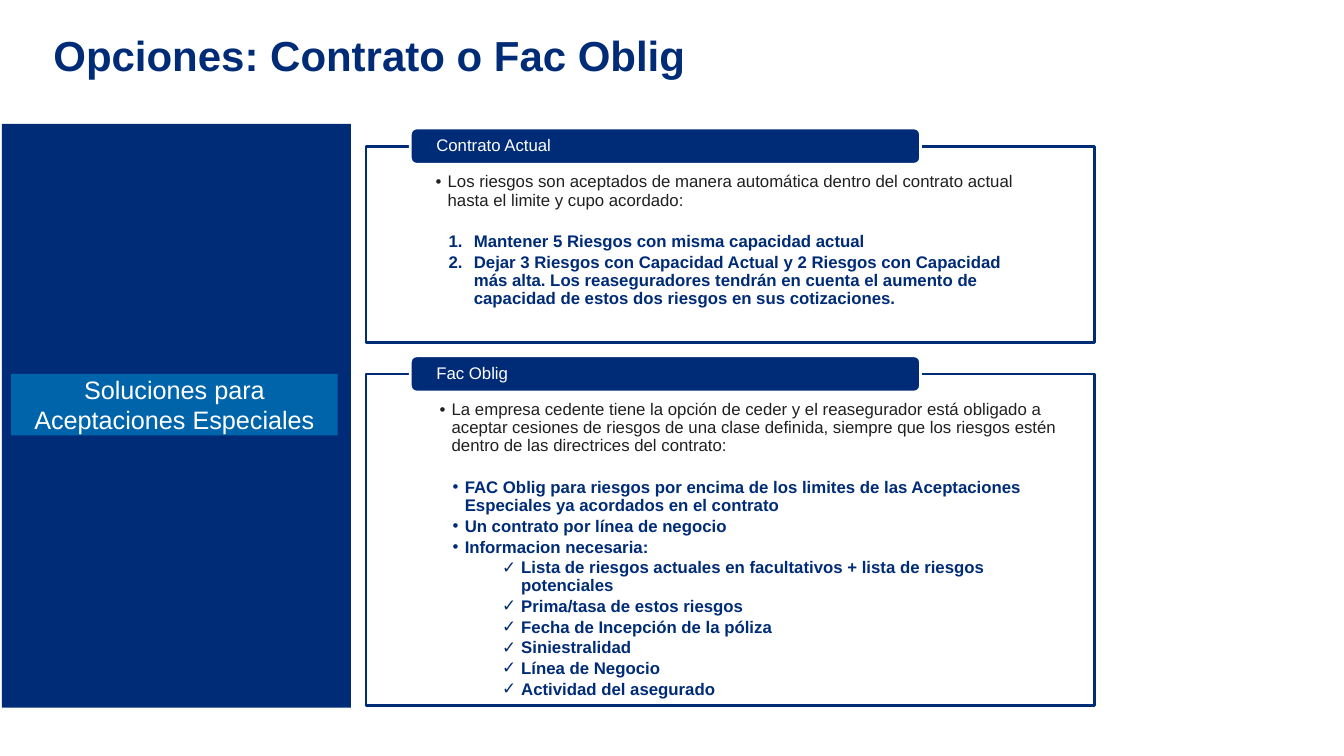
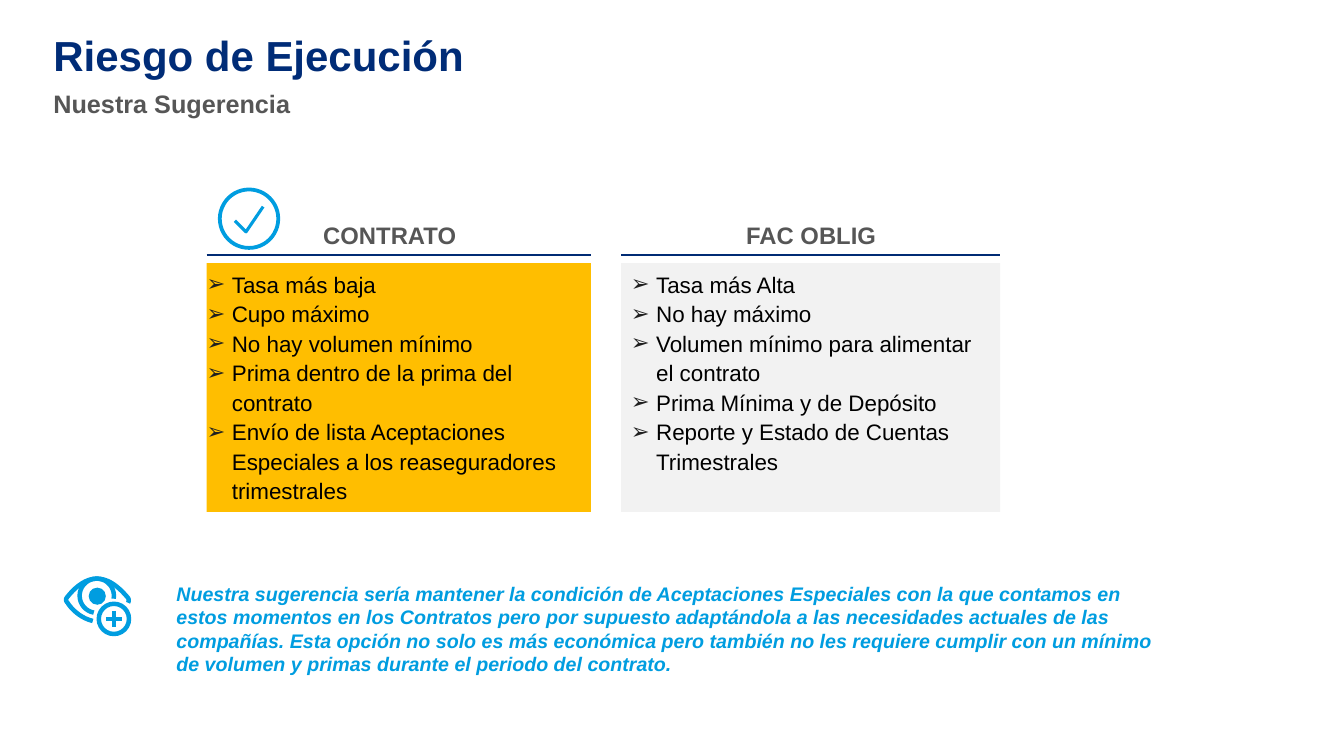
import math

import pptx
import pptx.dml.color
import pptx.enum.shapes
import pptx.enum.text
import pptx.oxml
import pptx.oxml.ns
import pptx.util
from pptx.util import Inches, Pt

RGBColor = pptx.dml.color.RGBColor
MSO_SHAPE = pptx.enum.shapes.MSO_SHAPE
MSO_ANCHOR = pptx.enum.text.MSO_ANCHOR
PP_ALIGN = pptx.enum.text.PP_ALIGN

NAVY = RGBColor(0x00, 0x2C, 0x77)
RULE = RGBColor(0x00, 0x2B, 0x74)
SKY = RGBColor(0x00, 0x9D, 0xE0)
AMBER = RGBColor(0xFF, 0xBE, 0x00)
PALE = RGBColor(0xF2, 0xF2, 0xF2)
GREY = RGBColor(0x56, 0x56, 0x56)
INK = RGBColor(0x20, 0x20, 0x20)
BLACK = RGBColor(0x00, 0x00, 0x00)
WHITE = RGBColor(0xFF, 0xFF, 0xFF)

FONT = "Arial"
NUMBER = "1."

# Bullet, left margin, hanging indent
INTRO = ("•", 0.12, 0.12)
NUMBERED = (NUMBER, 0.38, 0.25)
POINT = ("•", 0.25, 0.12)
CHECK = ("✓", 0.81, 0.19)
ARROW = ("➢", 0.25, 0.25)


def add_xml(parent, tag, **attrs):
    el = pptx.oxml.parse_xml(f"<a:{tag} {pptx.oxml.ns.nsdecls('a')}/>")
    for name, value in attrs.items():
        el.set(name, str(value))
    parent.append(el)
    return el


def set_bullet(p, style, color):
    mark, margin, hanging = style
    pPr = p._p.get_or_add_pPr()
    pPr.set("marL", str(Inches(margin)))
    pPr.set("indent", str(-Inches(hanging)))
    add_xml(add_xml(pPr, "buClr"), "srgbClr", val=color)
    add_xml(pPr, "buFont", typeface=FONT)
    if mark == NUMBER:
        add_xml(pPr, "buAutoNum", type="arabicPeriod")
    else:
        add_xml(pPr, "buChar", char=mark)


def set_font(p, size, color, bold=False, italic=False):
    f = p.font
    f.name, f.size, f.bold, f.italic = FONT, Pt(size), bold, italic
    f.color.rgb = color


def set_frame(tf, insets, anchor=MSO_ANCHOR.TOP):
    """Insets run left, top, right, bottom."""
    tf.word_wrap = True
    tf.vertical_anchor = anchor
    tf.margin_left, tf.margin_top, tf.margin_right, tf.margin_bottom = map(Inches, insets)


def next_paragraph(tf, text):
    p = tf.add_paragraph() if tf.text else tf.paragraphs[0]
    p.text = text
    p.alignment = PP_ALIGN.LEFT
    return p


def add_text(s, box, text, size, color, bold=True, italic=False,
             insets=(0, 0, 0, 0), align=PP_ALIGN.LEFT, spacing=1.0):
    tf = s.shapes.add_textbox(*map(Inches, box)).text_frame
    set_frame(tf, insets)
    p = next_paragraph(tf, text)
    p.alignment = align
    p.line_spacing = spacing
    set_font(p, size, color, bold, italic)


def add_box(s, box, fill, line=None, width=2, kind=MSO_SHAPE.RECTANGLE):
    sp = s.shapes.add_shape(kind, *map(Inches, box))
    sp.shadow.inherit = False
    if fill is None:
        sp.fill.background()
    else:
        sp.fill.solid()
        sp.fill.fore_color.rgb = fill
    if line is None:
        sp.line.fill.background()
    else:
        sp.line.color.rgb = line
        sp.line.width = Pt(width)
    return sp


def add_line(s, start, end, color, width):
    c = s.shapes.add_connector(pptx.enum.shapes.MSO_CONNECTOR.STRAIGHT,
                               *map(Inches, start + end))
    c.line.color.rgb = color
    c.line.width = Pt(width)
    add_xml(c._element.spPr, "effectLst")


def add_stroke(s, points, width):
    """Open outline through the points."""
    (x, y), *rest = [(Inches(px), Inches(py)) for px, py in points]
    builder = s.shapes.build_freeform(x, y, scale=1.0)
    builder.add_line_segments(rest, close=False)
    sp = builder.convert_to_shape()
    sp.shadow.inherit = False
    sp.fill.background()
    sp.line.color.rgb = SKY
    sp.line.width = Pt(width)


def curve(start, *segments, steps=10):
    """Points along a chain of cubic curves, each (control, control, end)."""
    points = [start]
    for b, c, d in segments:
        a = points[-1]
        for i in range(1, steps + 1):
            t = i / steps
            u = 1 - t
            points.append(tuple(
                u**3 * a[k] + 3 * u * u * t * b[k] + 3 * u * t * t * c[k] + t**3 * d[k]
                for k in (0, 1)))
    return points


def arc(cx, cy, r, first, last, step=10):
    return [(cx + r * math.cos(math.radians(a)), cy + r * math.sin(math.radians(a)))
            for a in range(first, last - 1, -step)]


def add_title(s, text):
    add_text(s, (0.53, 0.39, 12.27, 0.54), text, 30, NAVY, spacing=0.8)


def add_panel(s, top, height, heading, side_insets, intro, points):
    """Framed text with a heading tab; points are (bullet style, text)."""
    left, right = side_insets
    tf = add_box(s, (3.63, top, 7.23, height), WHITE, NAVY).text_frame
    set_frame(tf, (left, 0.27, right, 0.09))
    for i, (style, text) in enumerate([(INTRO, intro), *points]):
        color = NAVY if i else INK
        p = next_paragraph(tf, text)
        set_bullet(p, style, color)
        p.line_spacing = 0.9
        p.space_before = Pt(15 if i == 1 else 0)
        p.space_after = Pt(1.8)
        set_font(p, 12, color, bold=i > 0)

    tab = add_box(s, (4.07, top - 0.18, 5.06, 0.36), NAVY, WHITE,
                  kind=MSO_SHAPE.ROUNDED_RECTANGLE)
    set_frame(tab.text_frame, (0.24, 0, 0.24, 0), MSO_ANCHOR.MIDDLE)
    p = next_paragraph(tab.text_frame, heading)
    p.line_spacing = 0.9
    set_font(p, 12, WHITE)


def add_sidebar(s, text):
    add_box(s, (0.02, 1.23, 3.46, 5.79), NAVY)
    label = add_box(s, (0.11, 3.71, 3.24, 0.61), SKY)
    color = label.fill._xPr.find(".//" + pptx.oxml.ns.qn("a:srgbClr"))
    add_xml(color, "alpha", val=50000)
    set_frame(label.text_frame, (0.1, 0.05, 0.1, 0.05), MSO_ANCHOR.MIDDLE)
    p = next_paragraph(label.text_frame, text)
    p.alignment = PP_ALIGN.CENTER
    set_font(p, 18, WHITE)


def add_column(s, left, width, fill, inset, heading, heading_box, items):
    tf = add_box(s, (left, 2.61, width, 2.47), fill).text_frame
    set_frame(tf, (inset, 0.05, inset, 0.05))
    for text in items:
        p = next_paragraph(tf, text)
        set_bullet(p, ARROW, INK)
        p.line_spacing = 1.1
        set_font(p, 16, BLACK)
    x, w = heading_box
    add_text(s, (x, 2.14, w, 0.39), heading, 17, GREY,
             insets=(0.1, 0.05, 0.1, 0.05), align=PP_ALIGN.CENTER)
    add_line(s, (left, 2.53), (left + width, 2.53), RULE, 0.75)


def add_check_icon(s):
    add_box(s, (2.18, 1.88, 0.58, 0.58), None, SKY, 2.7, MSO_SHAPE.OVAL)
    add_stroke(s, [(2.33, 2.19), (2.44, 2.3), (2.61, 2.05)], 2.2)


def add_eye_icon(s):
    width = 3.2
    add_box(s, (0.88, 5.83, 0.17, 0.17), SKY, kind=MSO_SHAPE.OVAL)
    add_stroke(s, curve(
        (1.27, 5.98),
        ((1.28, 5.96), (1.28, 5.94), (1.26, 5.92)),
        ((1.19, 5.84), (1.09, 5.74), (0.96, 5.74)),
        ((0.82, 5.74), (0.71, 5.87), (0.67, 5.92)),
        ((0.65, 5.94), (0.65, 5.96), (0.67, 5.98)),
        ((0.7, 6.03), (0.79, 6.13), (0.92, 6.16))), width)
    add_stroke(s, arc(0.96, 5.91, 0.17, 10, -260), width)
    x, y, r, arm = 1.13, 6.14, 0.15, 0.08
    add_box(s, (x - r, y - r, 2 * r, 2 * r), None, SKY, width, MSO_SHAPE.OVAL)
    add_line(s, (x - arm, y), (x + arm, y), SKY, width)
    add_line(s, (x, y - arm), (x, y + arm), SKY, width)


def build_options(s):
    add_title(s, "Opciones: Contrato o Fac Oblig")
    add_panel(
        s, 1.45, 1.95, "Contrato Actual", (0.69, 0.69),
        "Los riesgos son aceptados de manera automática dentro del contrato actual "
        "hasta el limite y cupo acordado:",
        [(NUMBERED, "Mantener 5 Riesgos con misma capacidad actual"),
         (NUMBERED, "Dejar 3 Riesgos con Capacidad Actual y 2 Riesgos con Capacidad más alta. "
                    "Los reaseguradores tendrán en cuenta el aumento de capacidad de estos "
                    "dos riesgos en sus cotizaciones.")])
    add_panel(
        s, 3.71, 3.29, "Fac Oblig", (0.73, 0.29),
        "La empresa cedente tiene la opción de ceder y el reasegurador está obligado a "
        "aceptar cesiones de riesgos de una clase definida, siempre que los riesgos estén "
        "dentro de las directrices del contrato:",
        [(POINT, "FAC Oblig para riesgos por encima de los limites de las Aceptaciones "
                 "Especiales ya acordados en el contrato"),
         (POINT, "Un contrato por línea de negocio"),
         (POINT, "Informacion necesaria:"),
         (CHECK, "Lista de riesgos actuales en facultativos + lista de riesgos potenciales"),
         (CHECK, "Prima/tasa de estos riesgos"),
         (CHECK, "Fecha de Incepción de la póliza"),
         (CHECK, "Siniestralidad"),
         (CHECK, "Línea de Negocio"),
         (CHECK, "Actividad del asegurado")])
    add_sidebar(s, "Soluciones para Aceptaciones Especiales")


def build_suggestion(s):
    add_title(s, "Riesgo de Ejecución")
    add_text(s, (0.53, 0.88, 12.28, 0.35), "Nuestra Sugerencia", 18, GREY)
    add_column(s, 2.05, 3.81, AMBER, 0, "CONTRATO", (1.94, 3.85), [
        "Tasa más baja",
        "Cupo máximo",
        "No hay volumen mínimo",
        "Prima dentro de la prima del contrato",
        "Envío de lista Aceptaciones Especiales a los reaseguradores trimestrales"])
    add_column(s, 6.16, 3.76, PALE, 0.1, "FAC OBLIG", (6.64, 2.81), [
        "Tasa más Alta",
        "No hay máximo",
        "Volumen mínimo para alimentar el contrato",
        "Prima Mínima y de Depósito",
        "Reporte y Estado de Cuentas Trimestrales"])
    add_check_icon(s)
    add_eye_icon(s)
    add_text(s, (1.75, 5.77, 9.73, 0.94),
             "Nuestra sugerencia sería mantener la condición de Aceptaciones Especiales con la "
             "que contamos en estos momentos en los Contratos pero por supuesto adaptándola a "
             "las necesidades actuales de las compañías. Esta opción no solo es más económica "
             "pero también no les requiere cumplir con un mínimo de volumen y primas durante "
             "el periodo del contrato.", 14, SKY, italic=True)


def main():
    prs = pptx.Presentation()
    prs.slide_width, prs.slide_height = Inches(13.33), Inches(7.5)
    for build in (build_options, build_suggestion):
        build(prs.slides.add_slide(prs.slide_layouts[6]))
    prs.save("out.pptx")


if __name__ == "__main__":
    main()
